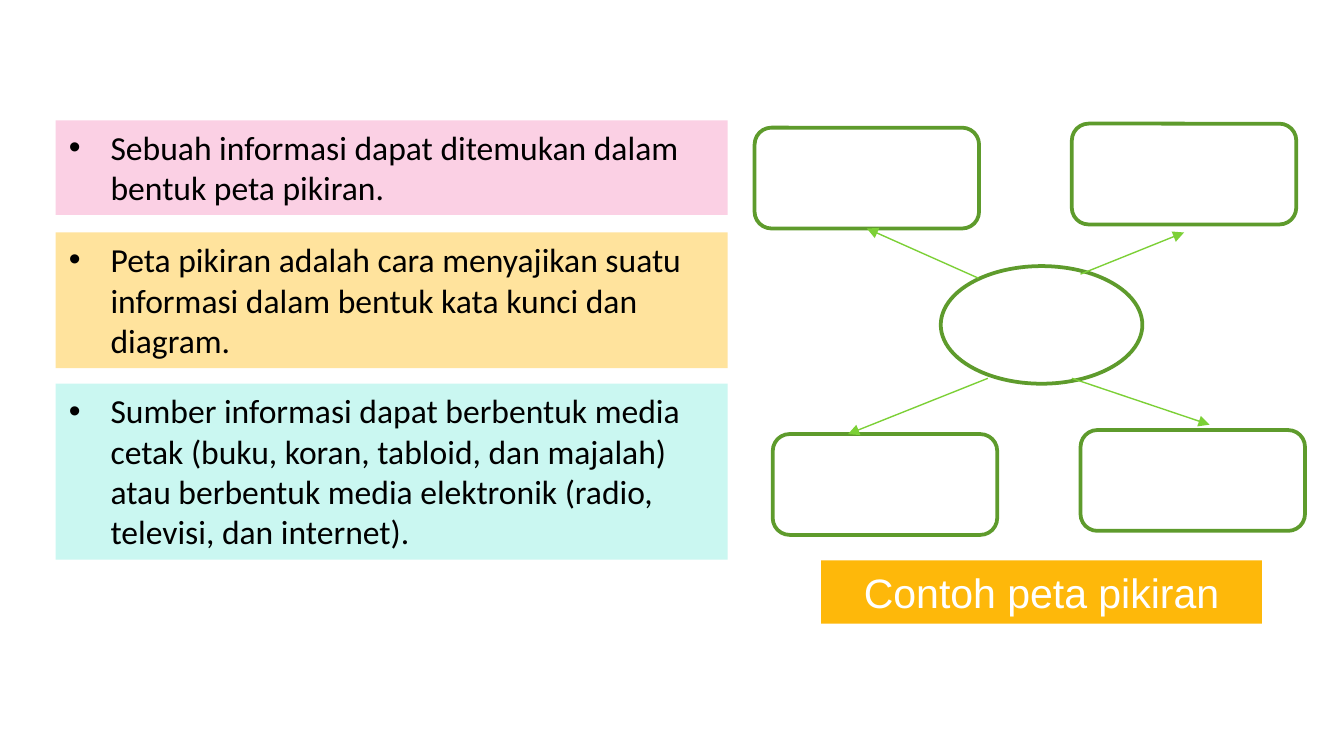
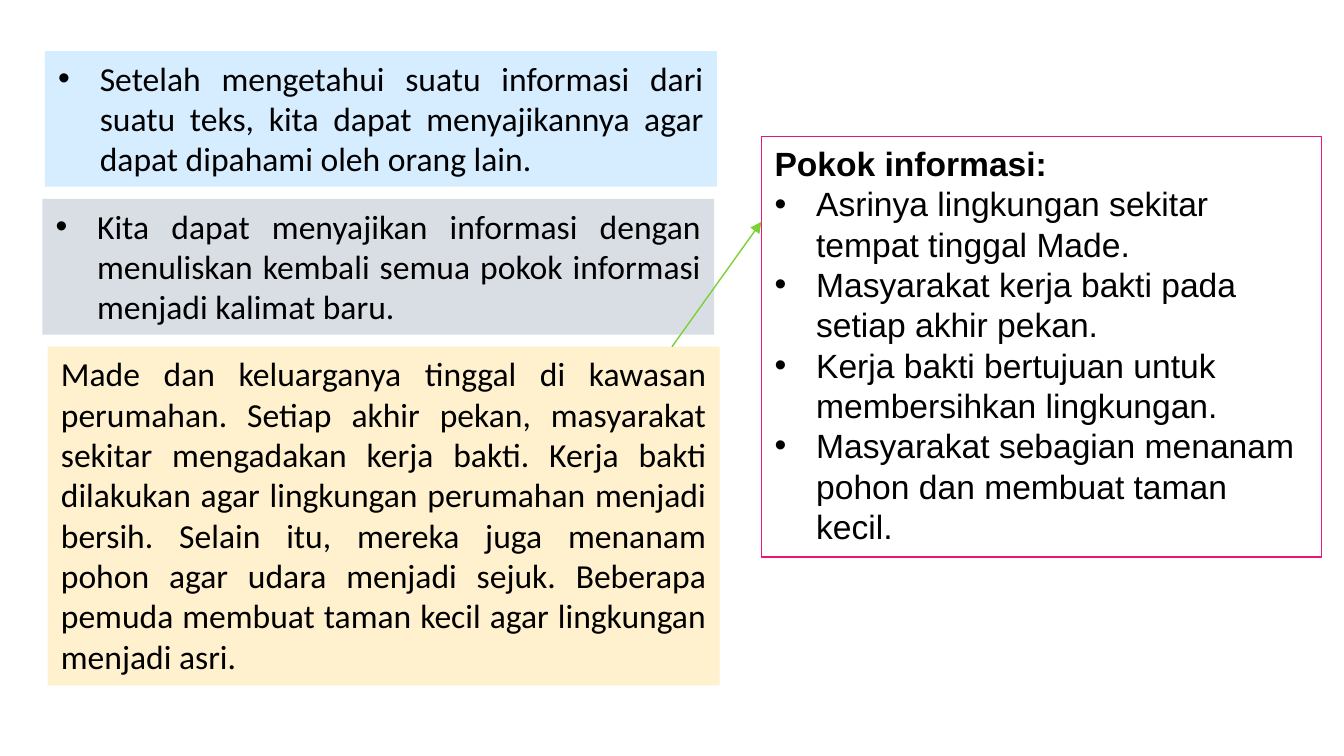
from dataclasses import dataclass

import pptx
import pptx.dml.color
import pptx.enum.shapes
import pptx.enum.text
import pptx.oxml.ns
import pptx.util
from lxml import etree

PX = 4572  # EMU per px, 200 px to the inch
SLIDE_W, SLIDE_H = 2000, 1125
BLACK, WHITE = "000000", "FFFFFF"
NODE_LINE, ARROW_LINE = "5E9B2C", "7CD036"
NODE_W, NODE_H = 334, 150
PANEL_W = 1000
HANGING = 62

SHAPE = pptx.enum.shapes.MSO_SHAPE
LEFT = pptx.enum.text.PP_ALIGN.LEFT
CENTER = pptx.enum.text.PP_ALIGN.CENTER
JUSTIFY = pptx.enum.text.PP_ALIGN.JUSTIFY


@dataclass
class Line:
    text: str
    bullet: bool = True
    bold: bool = False


@dataclass
class Panel:
    x: int
    y: int
    h: int
    lines: list[Line]
    fill: str | None = None
    border: str | None = None
    w: int = PANEL_W
    align: pptx.enum.text.PP_ALIGN = LEFT
    font: str = "Calibri"
    size: int = 18
    color: str = BLACK


@dataclass
class Arrow:
    x1: int
    y1: int
    x2: int
    y2: int


def px(n: int) -> pptx.util.Emu:
    return pptx.util.Emu(n * PX)


def rgb(value: str) -> pptx.dml.color.RGBColor:
    return pptx.dml.color.RGBColor.from_string(value)


def set_line(sp, color: str, width: float) -> None:
    sp.line.color.rgb = rgb(color)
    sp.line.width = pptx.util.Pt(width)


def add_bullet(p) -> None:
    pPr = p._p.get_or_add_pPr()
    pPr.set("marL", str(px(HANGING)))
    pPr.set("indent", str(-px(HANGING)))
    etree.SubElement(pPr, pptx.oxml.ns.qn("a:buFont")).set("typeface", "Arial")
    etree.SubElement(pPr, pptx.oxml.ns.qn("a:buChar")).set("char", "•")


def add_panel(s, panel: Panel) -> None:
    sp = s.shapes.add_textbox(px(panel.x), px(panel.y), px(panel.w), px(panel.h))
    if panel.fill:
        sp.fill.solid()
        sp.fill.fore_color.rgb = rgb(panel.fill)
    if panel.border:
        set_line(sp, panel.border, 0.75)
    tf = sp.text_frame
    tf.word_wrap = True
    tf.auto_size = pptx.enum.text.MSO_AUTO_SIZE.SHAPE_TO_FIT_TEXT
    for i, line in enumerate(panel.lines):
        p = tf.add_paragraph() if i else tf.paragraphs[0]
        p.text = line.text
        p.alignment = panel.align
        if line.bullet:
            add_bullet(p)
        for r in p.runs:
            r.font.name = panel.font
            r.font.size = pptx.util.Pt(panel.size)
            r.font.bold = line.bold
            r.font.color.rgb = rgb(panel.color)


def add_node(shapes, kind: SHAPE, x: int, y: int, w: int = NODE_W, h: int = NODE_H):
    sp = shapes.add_shape(kind, px(x), px(y), px(w), px(h))
    sp.shadow.inherit = False
    sp.fill.background()
    set_line(sp, NODE_LINE, 2)
    return sp


def add_arrow(shapes, a: Arrow):
    cxn = shapes.add_connector(pptx.enum.shapes.MSO_CONNECTOR.STRAIGHT,
                               px(a.x1), px(a.y1), px(a.x2), px(a.y2))
    set_line(cxn, ARROW_LINE, 0.75)
    ln = cxn.line._get_or_add_ln()
    etree.SubElement(ln, pptx.oxml.ns.qn("a:tailEnd")).set("type", "triangle")
    etree.SubElement(cxn._element.spPr, pptx.oxml.ns.qn("a:effectLst"))
    return cxn


def add_mind_map(s) -> None:
    shapes = s.shapes.add_group_shape().shapes
    add_node(shapes, SHAPE.OVAL, 1400, 396, 300, 175)
    corners = [(1123, 190), (1595, 184), (1150, 646), (1608, 640)]
    nodes = [add_node(shapes, SHAPE.ROUNDED_RECTANGLE, x, y) for x, y in corners]
    arrows = [Arrow(1456, 414, 1290, 340), Arrow(1608, 408, 1762, 346),
              Arrow(1470, 563, 1262, 646), Arrow(1595, 563, 1800, 632)]
    cxns = [add_arrow(shapes, a) for a in arrows]
    cxns[0].end_connect(nodes[0], 2)


# Slide 1: what a mind map is
DEFINITIONS = [
    Panel(83, 179, 141, [Line("Sebuah informasi dapat ditemukan dalam bentuk peta pikiran.")],
          "FBD0E4"),
    Panel(83, 346, 202, [Line("Peta pikiran adalah cara menyajikan suatu informasi dalam "
                              "bentuk kata kunci dan diagram.")], "FFE39D"),
    Panel(83, 571, 262, [Line("Sumber informasi dapat berbentuk media cetak (buku, koran, "
                              "tabloid, dan majalah) atau berbentuk media elektronik "
                              "(radio, televisi, dan internet).")], "CAF7F1"),
]
CAPTION = Panel(1222, 834, 94, [Line("Contoh peta pikiran", bullet=False)], "FEB80A",
                w=656, align=CENTER, font="Arial", size=22, color=WHITE)

# Slide 2: restating the main points of a text
RETELLING = [
    Panel(67, 76, 202, [Line("Setelah mengetahui suatu informasi dari suatu teks, kita dapat "
                             "menyajikannya agar dapat dipahami oleh orang lain.")],
          "D6ECFF", align=JUSTIFY),
    Panel(63, 296, 202, [Line("Kita dapat menyajikan informasi dengan menuliskan kembali "
                              "semua pokok informasi menjadi kalimat baru.")],
          "D9DEE5", align=JUSTIFY),
    Panel(71, 516, 504, [Line(
        "Made dan keluarganya tinggal di kawasan perumahan. Setiap akhir pekan, masyarakat "
        "sekitar mengadakan kerja bakti. Kerja bakti dilakukan agar lingkungan perumahan "
        "menjadi bersih. Selain itu, mereka juga menanam pohon agar udara menjadi sejuk. "
        "Beberapa pemuda membuat taman kecil agar lingkungan menjadi asri.",
        bullet=False)], "FFF1CE", align=JUSTIFY),
    Panel(1133, 203, 626, [
        Line("Pokok informasi:", bullet=False, bold=True),
        Line("Asrinya lingkungan sekitar tempat tinggal Made."),
        Line("Masyarakat kerja bakti pada setiap akhir pekan."),
        Line("Kerja bakti bertujuan untuk membersihkan lingkungan."),
        Line("Masyarakat sebagian menanam pohon dan membuat taman kecil."),
    ], border="EA157A", w=834, font="Arial"),
]


def main() -> None:
    prs = pptx.Presentation()
    prs.slide_width, prs.slide_height = px(SLIDE_W), px(SLIDE_H)
    blank = prs.slide_layouts[6]

    s = prs.slides.add_slide(blank)
    for panel in DEFINITIONS:
        add_panel(s, panel)
    add_mind_map(s)
    add_panel(s, CAPTION)

    s = prs.slides.add_slide(blank)
    for panel in RETELLING:
        add_panel(s, panel)
    add_arrow(s.shapes, Arrow(1000, 516, 1133, 330))

    prs.save("out.pptx")


if __name__ == "__main__":
    main()
